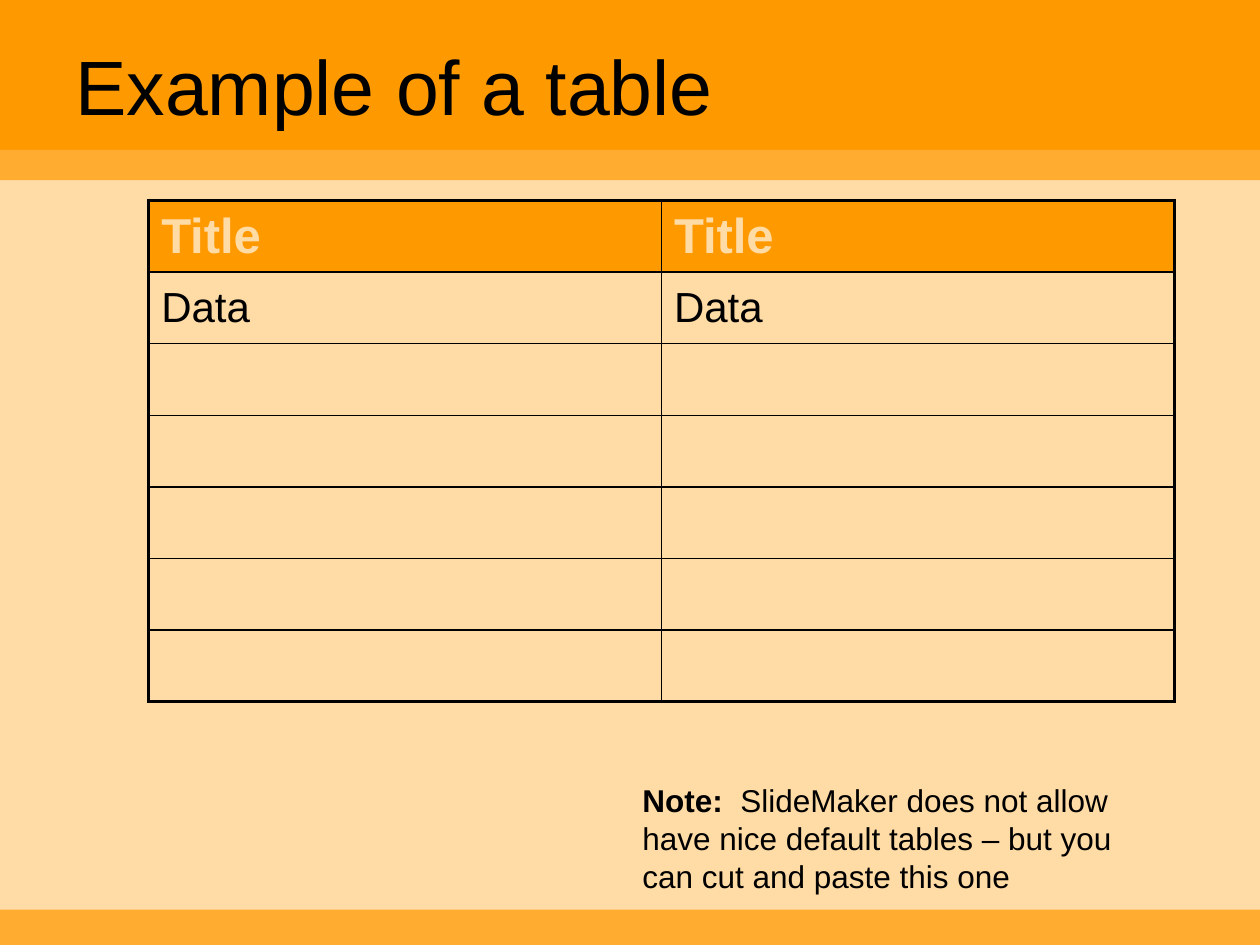
from lxml import etree
from pptx import Presentation
from pptx.dml.color import RGBColor
from pptx.enum.shapes import MSO_SHAPE
from pptx.enum.text import MSO_ANCHOR
from pptx.oxml.ns import qn
from pptx.util import Inches, Pt

RECTANGLE = MSO_SHAPE.RECTANGLE
MIDDLE = MSO_ANCHOR.MIDDLE
FONT = "Arial"
COLOURS = {"orange": "FF9900", "light_orange": "FFAC31", "cream": "FFDBA6", "black": "000000"}
ROWS = [("Title", "Title"), ("Data", "Data")] + [("", "")] * 5
THIN, THICK = 1, 2.25


def colour(name):
    """Return the named palette colour."""
    return RGBColor.from_string(COLOURS[name])


def format_run(run, size, colour_name="black", bold=False):
    """Apply font, size, colour and weight to a run."""
    run.font.name = FONT
    run.font.size = Pt(size)
    run.font.bold = bold
    run.font.color.rgb = colour(colour_name)


def add_band(slide, left, top, width, height, colour_name):
    """Add a plain coloured band in the given box."""
    band = slide.shapes.add_shape(RECTANGLE, left, top, width, height)
    band.shadow.inherit = False
    band.fill.solid()
    band.fill.fore_color.rgb = colour(colour_name)
    band.line.fill.background()


def add_title(slide, left, top, width, height):
    """Add the slide title, centred vertically in its box."""
    text_frame = slide.shapes.add_textbox(left, top, width, height).text_frame
    text_frame.word_wrap = True
    text_frame.vertical_anchor = MIDDLE
    text_frame.text = "Example of a table"
    format_run(text_frame.paragraphs[0].runs[0], 44)


def set_borders(cell, widths):
    """Draw black cell borders with left, right, top and bottom widths in points."""
    properties = cell._tc.get_or_add_tcPr()
    for position, (side, width) in enumerate(zip("LRTB", widths)):
        line = etree.Element(qn(f"a:ln{side}"), w=str(Pt(width)))
        fill = etree.SubElement(line, qn("a:solidFill"))
        etree.SubElement(fill, qn("a:srgbClr"), val=COLOURS["black"])
        properties.insert(position, line)


def add_data_table(slide, left, top, width, height):
    """Add the table with a bold header row and a thick outline."""
    row_count, column_count = len(ROWS), len(ROWS[0])
    table = slide.shapes.add_table(row_count, column_count, left, top, width, height).table
    table.first_row = False
    table.horz_banding = False
    for row, texts in enumerate(ROWS):
        for column, text in enumerate(texts):
            cell = table.cell(row, column)
            cell.vertical_anchor = MIDDLE
            if row == 0:
                cell.fill.solid()
                cell.fill.fore_color.rgb = colour("orange")
            else:
                cell.fill.background()
            if text:
                cell.text_frame.text = text
                style = (28, "cream", True) if row == 0 else (24,)
                format_run(cell.text_frame.paragraphs[0].runs[0], *style)
            outer_sides = (column == 0, column == column_count - 1, row == 0, row == row_count - 1)
            set_borders(cell, [THICK if outer else THIN for outer in outer_sides])


def add_note(slide, left, top, width, height):
    """Add the note with its bold lead-in."""
    text_frame = slide.shapes.add_textbox(left, top, width, height).text_frame
    text_frame.word_wrap = True
    paragraph = text_frame.paragraphs[0]
    parts = [
        ("Note:  ", True),
        ("SlideMaker does not allow have nice default tables – but you can cut and paste this one", False),
    ]
    for text, bold in parts:
        run = paragraph.add_run()
        run.text = text
        format_run(run, 18, bold=bold)


def main():
    """Build and save the presentation."""
    presentation = Presentation()
    presentation.slide_width = Inches(10)
    presentation.slide_height = Inches(7.5)
    slide = presentation.slides.add_slide(presentation.slide_layouts[6])
    slide.background.fill.solid()
    slide.background.fill.fore_color.rgb = colour("cream")
    for top, height, colour_name in [
        (0, 1.31, "orange"),
        (1.19, 0.24, "light_orange"),
        (7.22, 0.28, "light_orange"),
    ]:
        add_band(slide, 0, Inches(top), presentation.slide_width, Inches(height), colour_name)
    add_title(slide, Inches(0.5), Inches(0.28), Inches(9.07), Inches(0.79))
    add_data_table(slide, Inches(1.18), Inches(1.59), Inches(8.14), Inches(3.98))
    add_note(slide, Inches(5), Inches(6.15), Inches(4.21), Inches(1))
    presentation.save("out.pptx")


if __name__ == "__main__":
    main()
